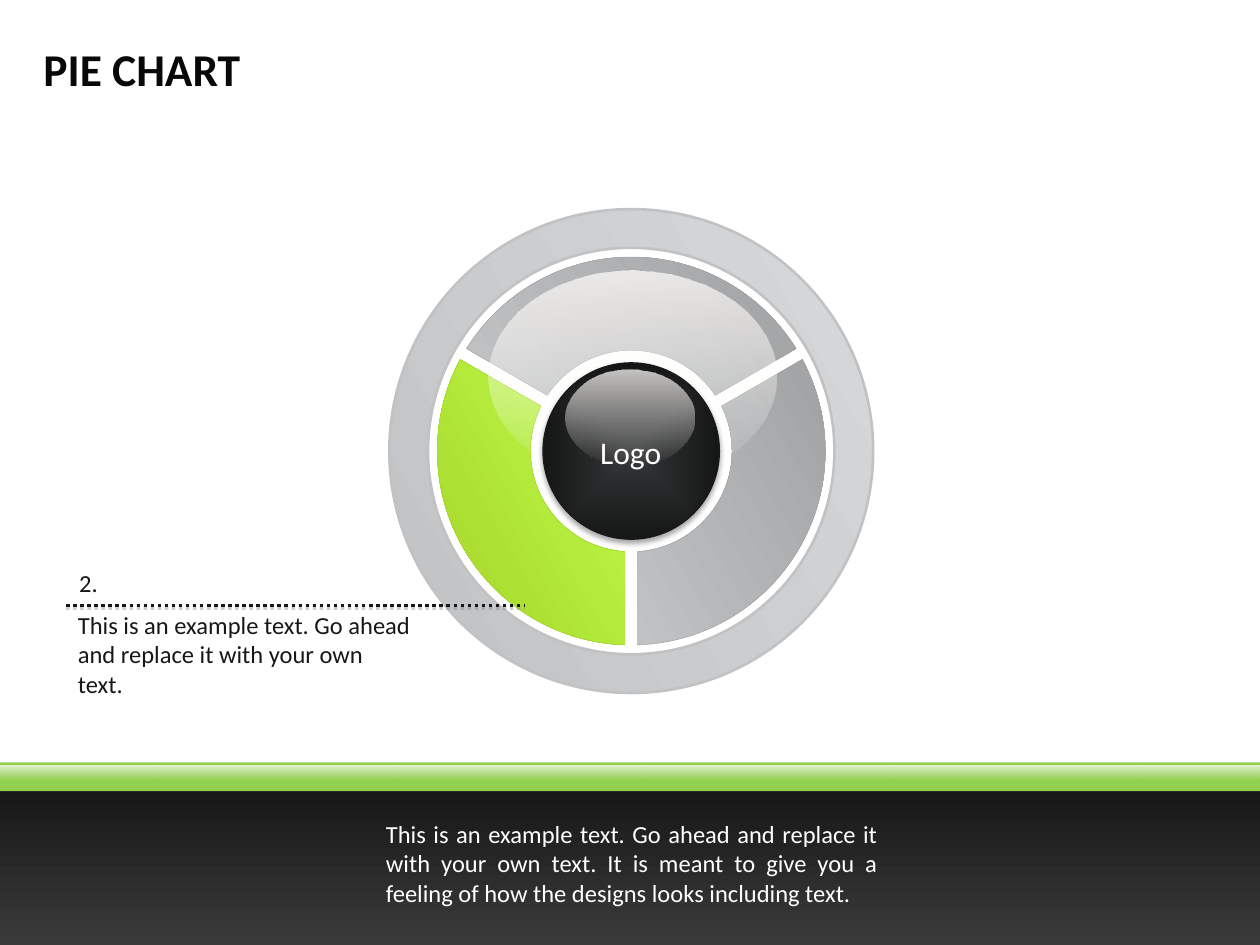
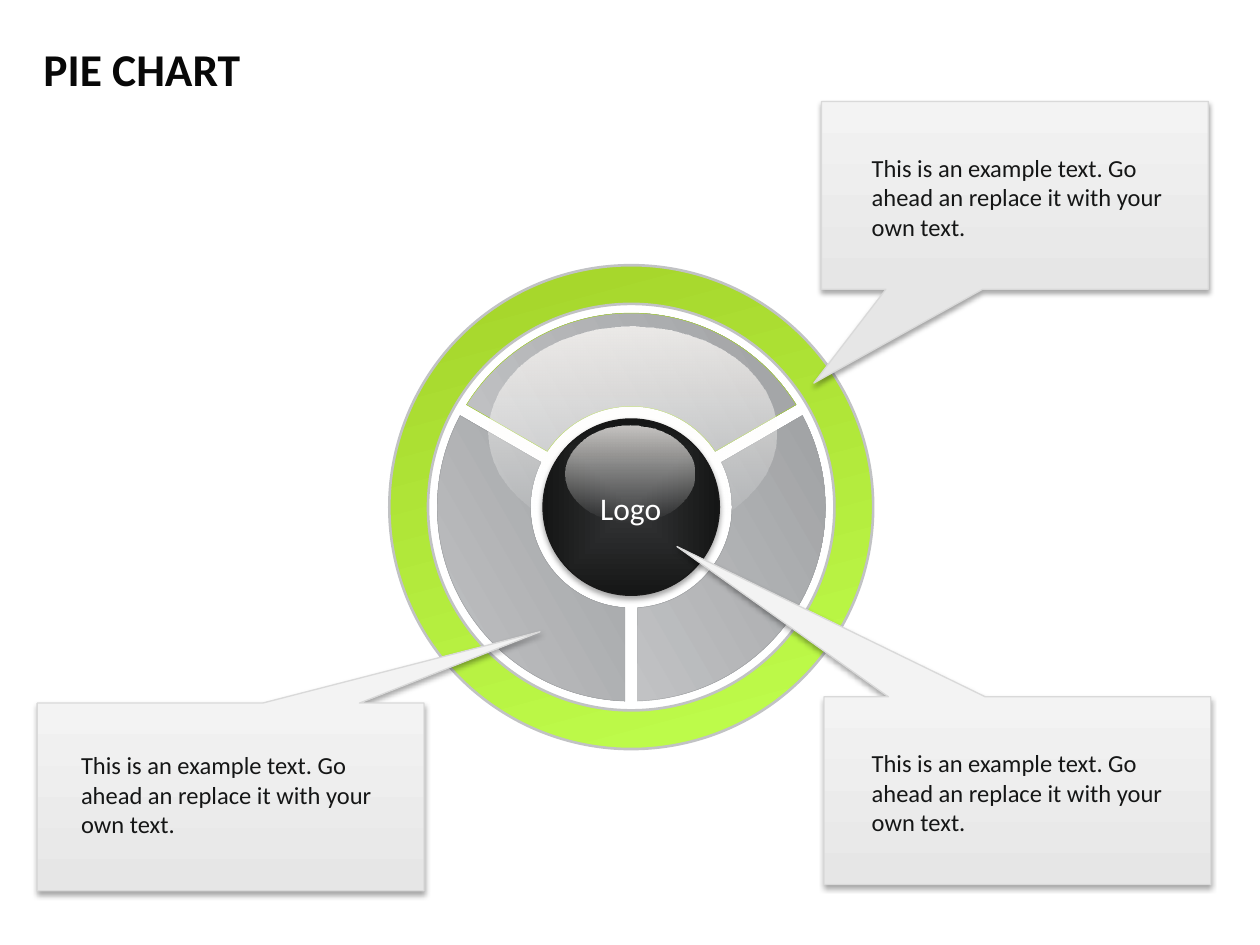
"""Build two pie chart slides on a grid of 100 columns by 75 rows."""
from math import asin, cos, degrees, radians, sin, tan

from lxml.etree import SubElement
from pptx import Presentation
from pptx.dml.color import RGBColor as RGB
from pptx.enum.dml import MSO_LINE
from pptx.enum.shapes import MSO_CONNECTOR, MSO_SHAPE as SHAPE
from pptx.enum.text import MSO_ANCHOR as ANCHOR, PP_ALIGN as ALIGN
from pptx.oxml.ns import qn
from pptx.util import Inches, Pt

CELL = Inches(0.1)


class Theme:
    ink, dark, white = "080808", "171717", "FFFFFF"
    silver, steel = ("C1C2C4", "D7D8D9"), ("C1C2C4", "A0A2A4")
    lime = ("A4D329", "C0FF4D")
    gloss, band_gloss = ("FFFFFF 0", "FFFCF9 77"), ("F3F3F3 0", "FFFCF9 79")
    hub, paper, footer = ("353637", "151616"), ("E6E6E6", "F3F3F3"), ("3A3A3A", "171717")
    band, hub_line, paper_line = "92D050", "191919", "D9D9D9"
    soft_shadow, rule_shadow = ("000000", 35, 3.1, 1.8), ("808080", 38, 0, 1.6)
    base = {"name": "Calibri", "size": Pt(14), "bold": False}
    title = {**base, "size": Pt(26), "bold": True}
    logo = {**base, "size": Pt(18)}


def cells(*values):
    return [round(v * CELL) for v in values]


def style(sp, fill=None, angle=90, line=None, width=0.75, shadow=None):
    pr = sp.element.spPr
    if isinstance(fill, str):
        sp.fill.solid()
        sp.fill.fore_color.rgb = RGB.from_string(fill)
    elif fill:
        sp.fill.gradient()
        grad = pr.find(qn("a:gradFill"))
        for stop, value in zip(sp.fill.gradient_stops, fill):
            color, *alpha = value.split()
            stop.color.rgb = RGB.from_string(color)
            for a in alpha:
                clr = grad.findall(".//" + qn("a:srgbClr"))[-1]
                SubElement(clr, qn("a:alpha"), val=str(int(a) * 1000))
        if angle is None:
            grad.remove(grad.find(qn("a:lin")))
            focus = SubElement(grad, qn("a:path"), path="shape")
            SubElement(focus, qn("a:fillToRect"), dict.fromkeys("ltrb", "50000"))
        else:
            sp.fill.gradient_angle = angle
    if line:
        sp.line.color.rgb = RGB.from_string(line)
        sp.line.width = Pt(width)
    else:
        sp.line.fill.background()
    effects = SubElement(pr, qn("a:effectLst"))
    if shadow:
        color, alpha, blur, dist = shadow
        outer = SubElement(effects, qn("a:outerShdw"), blurRad=str(Pt(blur)),
                           dist=str(Pt(dist)), dir="5400000", rotWithShape="0")
        clr = SubElement(outer, qn("a:srgbClr"), val=color)
        SubElement(clr, qn("a:alpha"), val=str(alpha * 1000))


T = Theme
CX, RING, OUTER, INNER, GAP = 50.1, 19.2, 15.4, 8, 0.5
CROWNS = {30: 0, 150: 180, 270: 270}
GRAY, GREEN = (T.steel, T.steel[1]), (T.lime, T.lime[0])
NOTE = "This is an example text. Go ahead an replace it with your own text."
SLIDES = [
    {
        "cy": 35.8, "ring": T.silver, "ring_angle": 30,
        "sectors": {30: GRAY, 150: GREEN, 270: GRAY},
        "bands": [((0, 62.5, 100, 12.5), T.footer),
                  ((0, 60.5, 100, 2.3), T.band),
                  ((0, 60.75, 100, 1.1), T.band_gloss)],
        "rules": [(5.25, 48.05, 41.65, 48.05)],
        "callouts": [],
        "texts": [
            ((5.2, 47.9, 28.6, 8.1), T.dark, ALIGN.LEFT, ANCHOR.TOP,
             "This is an example text. Go ahead and replace it with your own text."),
            ((5.3, 44.6, 4, 3.4), T.dark, ALIGN.LEFT, ANCHOR.TOP, "2."),
            ((29.65, 64.8, 41, 7.7), T.white, ALIGN.JUSTIFY, ANCHOR.BOTTOM,
             "This is an example text. Go ahead and replace it with your own text. "
             "It is meant to give you a feeling of how the designs looks including text."),
        ],
    },
    {
        "cy": 40.25, "ring": T.lime, "ring_angle": 285,
        "sectors": {30: GRAY, 150: GRAY, 270: (T.steel, T.lime[0])},
        "bands": [], "rules": [],
        "callouts": [((65.2, 8.05), (-0.52, 1)),
                     ((65.4, 55.3), (-0.88, -1.3)),
                     ((2.95, 55.8), (0.8, -0.88))],
        "texts": [((x, y, 25.6, 8.1), T.hub[1], ALIGN.LEFT, ANCHOR.TOP, NOTE)
                  for x, y in ((68.2, 11.65), (68.2, 58.9), (5.45, 59.05))],
    },
]

prs = Presentation()
prs.slide_width, prs.slide_height = cells(100, 75)

for page in SLIDES:
    s = prs.slides.add_slide(prs.slide_layouts[6])
    cy = page["cy"]

    ring = s.shapes.add_shape(SHAPE.DONUT, *cells(CX - RING, cy - RING, 2 * RING, 2 * RING))
    ring.adjustments[0] = 0.08
    style(ring, page["ring"], page["ring_angle"], T.silver[0], 1.5)

    for middle, (fill, line) in page["sectors"].items():
        points = []
        for radius, side in ((OUTER, 1), (INNER, -1)):
            half = side * (60 - degrees(asin(GAP / radius)))
            stops = [radians(a) for a in (middle - half, CROWNS[middle], middle + half)]
            points.append((CX + radius * cos(stops[0]), cy + radius * sin(stops[0])))
            for a, b in zip(stops, stops[1:]):
                k = 4 / 3 * tan((b - a) / 4)
                for t, pull in ((a, k), (b, -k), (b, 0)):
                    points.append((CX + radius * (cos(t) - pull * sin(t)),
                                   cy + radius * (sin(t) + pull * cos(t))))
        builder = s.shapes.build_freeform(*cells(*points[0]))
        builder.add_line_segments([cells(*point) for point in points[1:]], close=True)
        sector = builder.convert_to_shape()
        lines = list(sector.element.iter(qn("a:lnTo")))
        for first in (0, 3, 7, 10):
            curve = lines[first].makeelement(qn("a:cubicBezTo"))
            lines[first].addprevious(curve)
            for segment in lines[first:first + 3]:
                curve.append(segment[0])
                segment.getparent().remove(segment)
        style(sector, fill, 30, line, 0.25)

    for left, top, w, h, fmt in (
        (11.3, 14.3, 22.8, 16.8, {"fill": T.gloss}),
        (7, 7, 14, 14, {"fill": T.hub, "angle": None, "line": T.hub_line,
                        "shadow": T.soft_shadow}),
        (5.25, 6.45, 10.3, 7.6, {"fill": T.gloss}),
    ):
        style(s.shapes.add_shape(SHAPE.OVAL, *cells(CX - left, cy - top, w, h)), **fmt)

    for ends in page["rules"]:
        rule = s.shapes.add_connector(MSO_CONNECTOR.STRAIGHT, *cells(*ends))
        style(rule, line=T.dark, width=2, shadow=T.rule_shadow)
        rule.line.dash_style = MSO_LINE.ROUND_DOT

    for box, fill in page["bands"]:
        style(s.shapes.add_shape(SHAPE.RECTANGLE, *cells(*box)), fill)

    for corner, tip in page["callouts"]:
        sp = s.shapes.add_shape(SHAPE.RECTANGULAR_CALLOUT, *cells(*corner, 30.7, 14.9))
        sp.adjustments[0], sp.adjustments[1] = tip
        style(sp, T.paper, line=T.paper_line, shadow=T.soft_shadow)

    texts = [(*item, T.base, {"space_before": Pt(2)}, {}) for item in page["texts"]]
    texts += [
        ((42.9, cy - 1.9, 14.3, 4), T.white, ALIGN.CENTER, ANCHOR.TOP, "Logo", T.logo, {}, {}),
        ((3.45, 2.1, 93.2, 6.6), T.ink, ALIGN.LEFT, ANCHOR.MIDDLE, "PIE CHART", T.title, {},
         {"margin_left": 0, "margin_right": 0}),
    ]
    for box, color, align, anchor, text, font, spacing, margins in texts:
        tf = s.shapes.add_textbox(*cells(*box)).text_frame
        p = tf.paragraphs[0]
        r = p.add_run()
        r.text = text
        r.font.color.rgb = RGB.from_string(color)
        for target, values in (
            (tf, {"word_wrap": True, "vertical_anchor": anchor, **margins}),
            (p, {"alignment": align, **spacing}),
            (r.font, font),
        ):
            for key, value in values.items():
                setattr(target, key, value)

prs.save("out.pptx")
